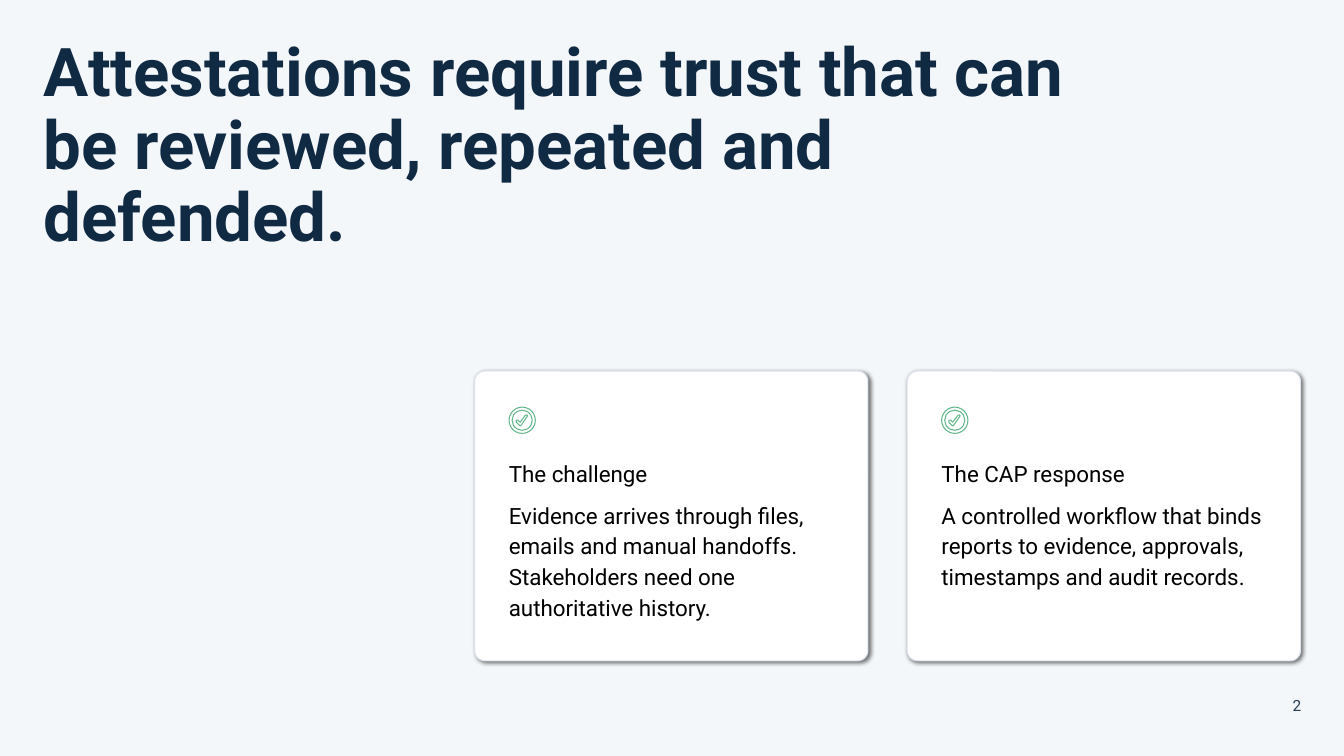
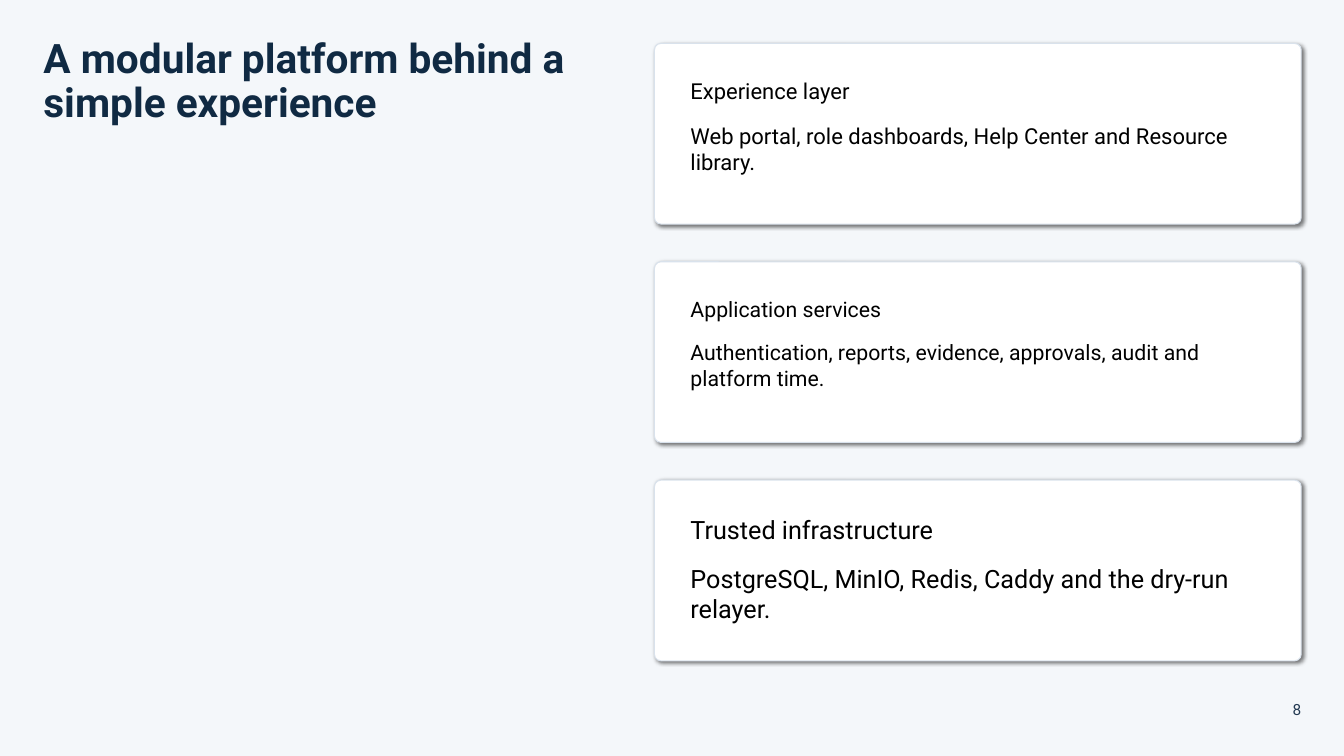
import pptx
import pptx.dml.color
import pptx.enum.shapes
import pptx.enum.text
import pptx.oxml
import pptx.oxml.ns
import pptx.util

Pt = pptx.util.Pt
RGBColor = pptx.dml.color.RGBColor
Shape = pptx.enum.shapes.MSO_SHAPE
Anchor = pptx.enum.text.MSO_ANCHOR
Align = pptx.enum.text.PP_ALIGN

FONT = "Roboto"
PAPER = RGBColor(0xF4, 0xF7, 0xFA)
WHITE = RGBColor(0xFF, 0xFF, 0xFF)
BLACK = RGBColor(0x00, 0x00, 0x00)
NAVY = RGBColor(0x10, 0x2A, 0x43)
SLATE = RGBColor(0x24, 0x3B, 0x53)
BORDER = RGBColor(0xD9, 0xE2, 0xEC)
GREEN = RGBColor(0x62, 0xB6, 0x8A)

CHECK = [(3.6, -3.8), (3.8, -3), (-0.6, 3.4), (-1.2, 4), (-2, 3.6),
         (-4.2, 1.4), (-4.2, 0), (-2.9, 0), (-1.4, 1.4), (2.3, -3.6)]
SHADOW = (
    f'<a:effectLst {pptx.oxml.ns.nsdecls("a")}>'
    '<a:outerShdw blurRad="38100" dist="19050" dir="2700000" algn="tl" rotWithShape="0">'
    '<a:srgbClr val="000000"><a:alpha val="55000"/></a:srgbClr>'
    '</a:outerShdw></a:effectLst>'
)


def add_text(page, box, texts, size, color=BLACK, bold=False, anchor=Anchor.TOP):
    """Add a text box without margins and return its paragraphs."""
    frame = page.shapes.add_textbox(*map(Pt, box)).text_frame
    frame.word_wrap = True
    frame.vertical_anchor = anchor
    frame.margin_left = frame.margin_right = frame.margin_top = frame.margin_bottom = 0
    frame.text = "\n".join(texts)
    for para in frame.paragraphs:
        para.font.name = FONT
        para.font.size = Pt(size)
        para.font.bold = bold
        para.font.color.rgb = color
    return frame.paragraphs


def add_page(deck, title, title_box, title_size, number, number_anchor):
    page = deck.slides.add_slide(deck.slide_layouts[6])
    page.background.fill.solid()
    page.background.fill.fore_color.rgb = PAPER
    heading, = add_text(page, title_box, [title], title_size, NAVY, bold=True)
    heading.line_spacing = 0.9
    footer, = add_text(page, (888.5, 494.6, 41, 18.7), [number], 11, SLATE,
                       anchor=number_anchor)
    footer.alignment = Align.RIGHT
    return page


def add_card(page, box):
    card = page.shapes.add_shape(Shape.ROUNDED_RECTANGLE, *map(Pt, box))
    card.adjustments[0] = 0.036
    card.fill.solid()
    card.fill.fore_color.rgb = WHITE
    card.line.color.rgb = BORDER
    card.line.width = Pt(0.75)
    card._element.spPr.append(pptx.oxml.parse_xml(SHADOW))


def add_check_badge(page, center_x, center_y):
    """Draw two rings around an outlined check mark."""
    parts = []
    for radius in (9.4, 7.2):
        parts.append(page.shapes.add_shape(
            Shape.OVAL, Pt(center_x - radius), Pt(center_y - radius),
            Pt(2 * radius), Pt(2 * radius)))
    points = [(Pt(center_x + x), Pt(center_y + y)) for x, y in CHECK]
    builder = page.shapes.build_freeform(*points[0])
    builder.add_line_segments(points[1:], close=True)
    parts.append(builder.convert_to_shape())
    for part in parts:
        part.shadow.inherit = False
        part.fill.background()
        part.line.color.rgb = GREEN
        part.line.width = Pt(0.75)


def add_badge_cards(page, box, cards, gap=28):
    """Place cards side by side, each with a badge above its text."""
    left, top, width, height = box
    card_width = (width - gap * (len(cards) - 1)) / len(cards)
    for index, texts in enumerate(cards):
        x = left + index * (card_width + gap)
        add_card(page, (x, top, card_width, height))
        add_check_badge(page, x + 34, top + 35.2)
        text_box = (x + 24.5, top + 61, card_width - 49, height - 94)
        for para in add_text(page, text_box, texts, 16):
            para.line_spacing = 1.14
            para.space_after = Pt(8)


def add_layer_cards(page, box, layers, gap=27):
    """Stack cards from top to bottom, each with its own text size."""
    left, top, width, height = box
    card_height = (height - gap * (len(layers) - 1)) / len(layers)
    for index, (size, *texts) in enumerate(layers):
        y = top + index * (card_height + gap)
        add_card(page, (left, y, width, card_height))
        text_box = (left + 25.7, y + 22.5, width - 46, card_height - 45)
        name, detail = add_text(page, text_box, texts, size)
        name.line_spacing = 1.1
        detail.space_before = detail.space_after = Pt(13)


def main():
    deck = pptx.Presentation()
    deck.slide_width = Pt(960)
    deck.slide_height = Pt(540)

    trust = add_page(
        deck, "Attestations require trust that can be reviewed, repeated and defended.",
        (31, 27.4, 744, 289), 48, "2", Anchor.MIDDLE)
    add_badge_cards(trust, (339, 265, 590, 207), [
        ("The challenge",
         "Evidence arrives through files, emails and manual handoffs. "
         "Stakeholders need one authoritative history."),
        ("The CAP response",
         "A controlled workflow that binds reports to evidence, approvals, "
         "timestamps and audit records."),
    ])

    platform = add_page(
        deck, "A modular platform behind a simple experience",
        (31, 27.4, 388, 83), 29, "8", Anchor.BOTTOM)
    add_layer_cards(platform, (467.5, 31, 462, 441), [
        (15.7, "Experience layer",
         "Web portal, role dashboards, Help Center and Resource library."),
        (15.2, "Application services",
         "Authentication, reports, evidence, approvals, audit and platform time."),
        (18, "Trusted infrastructure",
         "PostgreSQL, MinIO, Redis, Caddy and the dry-run relayer."),
    ])

    deck.save("out.pptx")


if __name__ == "__main__":
    main()
